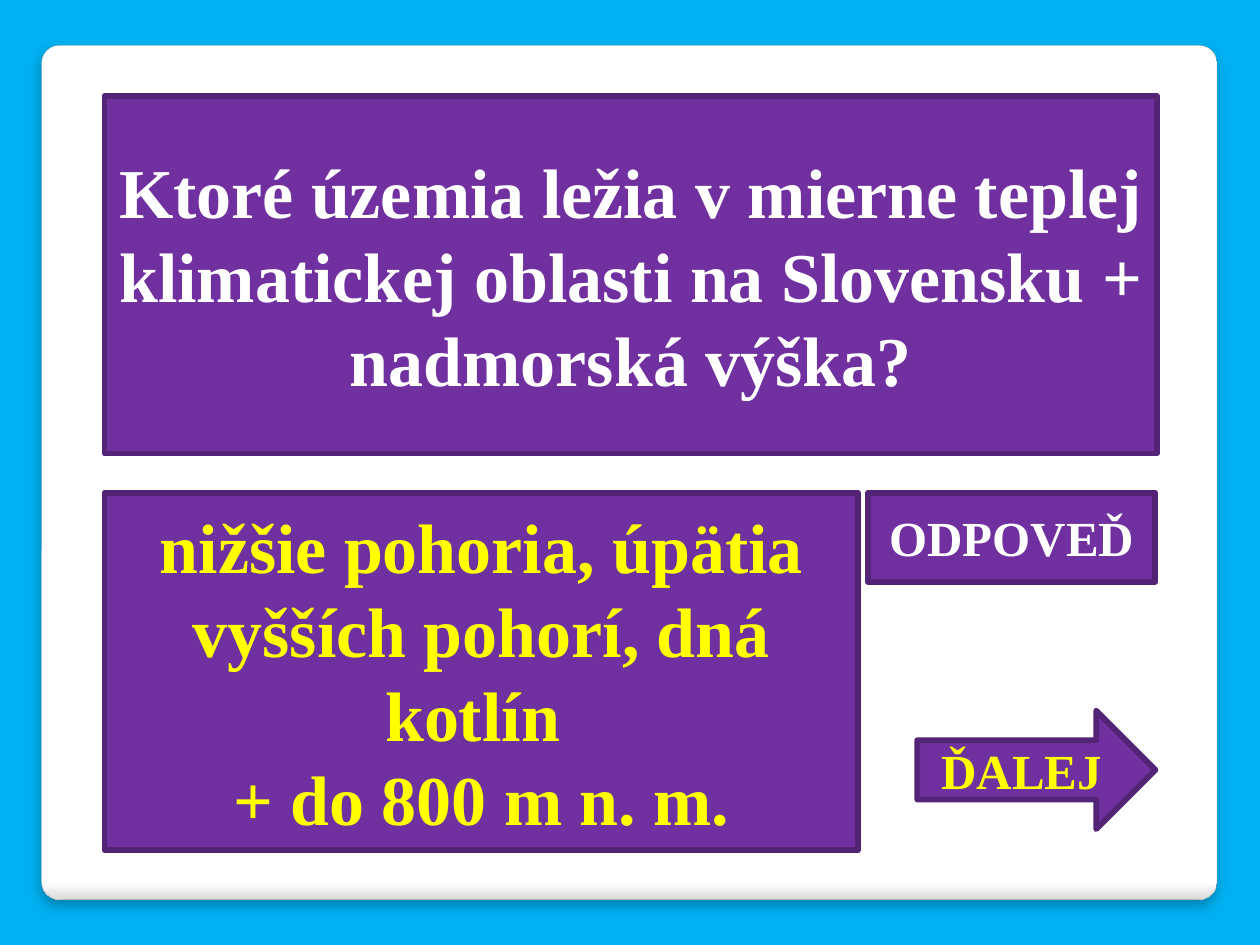
from lxml.etree import SubElement
from pptx import Presentation
from pptx.dml.color import RGBColor
from pptx.enum.shapes import MSO_SHAPE as SHAPE
from pptx.enum.text import MSO_ANCHOR as ANCHOR, PP_ALIGN as ALIGN
from pptx.oxml.ns import qn
from pptx.util import Inches, Pt

COLORS = {
    "sky": "00B0F0",
    "white": "FFFFFF",
    "edge": "DADADA",
    "outline": "A4A4A4",
    "shadow": "000000",
    "purple": "7030A0",
    "border": "532476",
    "yellow": "FFFF00",
}


class QuizSlide:
    """Style and current slide of a quiz card."""

    font = "Times New Roman"

    def __init__(self, prs):
        self.s = prs.slides.add_slide(prs.slide_layouts[6])
        fill = self.s.background.fill
        fill.solid()
        fill.fore_color.rgb = self.color("sky")

    def color(self, name):
        return RGBColor.from_string(COLORS[name])

    def shape(self, kind, box, line, width):
        sp = self.s.shapes.add_shape(kind, *map(Inches, box))
        sp.shadow.inherit = False
        sp.line.color.rgb = self.color(line)
        sp.line.width = Pt(width)
        return sp

    def card(self, box):
        sp = self.shape(SHAPE.ROUNDED_RECTANGLE, box, "outline", 0.16)
        sp.adjustments[0] = 0.021
        sp.fill.gradient()
        sp.fill.gradient_angle = 270
        stops = zip(sp.fill.gradient_stops, (0.98, 1), ("white", "edge"))
        for stop, position, name in stops:
            stop.position = position
            stop.color.rgb = self.color(name)
        effects = sp._element.spPr.find(qn("a:effectLst"))
        shadow = SubElement(effects, qn("a:outerShdw"), blurRad=str(Pt(6)),
                            dist=str(Pt(4)), dir="5400000", algn="t", rotWithShape="0")
        clr = SubElement(shadow, qn("a:srgbClr"), val=COLORS["shadow"])
        SubElement(clr, qn("a:alpha"), val="25000")

    def panel(self, box, lines, size, color, kind=SHAPE.RECTANGLE):
        sp = self.shape(kind, box, "border", 3.35)
        sp.fill.solid()
        sp.fill.fore_color.rgb = self.color("purple")
        SubElement(sp.line._ln, qn("a:round"))
        tf = sp.text_frame
        tf.word_wrap = True
        tf.vertical_anchor = ANCHOR.MIDDLE
        tf.text = "\n".join(lines)
        for p in tf.paragraphs:
            p.alignment = ALIGN.CENTER
            p.font.name = self.font
            p.font.size = Pt(size)
            p.font.bold = True
            p.font.color.rgb = self.color(color)


def main():
    prs = Presentation()
    prs.slide_width, prs.slide_height = Inches(10), Inches(7.5)
    quiz = QuizSlide(prs)
    quiz.card((0.33, 0.36, 9.33, 6.78))
    quiz.panel((0.83, 0.76, 8.35, 2.84),
               ["Ktoré územia ležia v mierne teplej klimatickej oblasti "
                "na Slovensku + nadmorská výška?"], 40, "white")
    quiz.panel((0.83, 3.91, 5.98, 2.84),
               ["nižšie pohoria, úpätia vyšších pohorí, dná kotlín ",
                "+ do 800 m n. m."], 40, "yellow")
    quiz.panel((6.89, 3.91, 2.28, 0.71), ["ODPOVEĎ"], 28, "white")
    quiz.panel((7.28, 5.64, 1.89, 0.94), ["ĎALEJ"], 28, "yellow", SHAPE.RIGHT_ARROW)
    prs.save("out.pptx")


if __name__ == "__main__":
    main()
